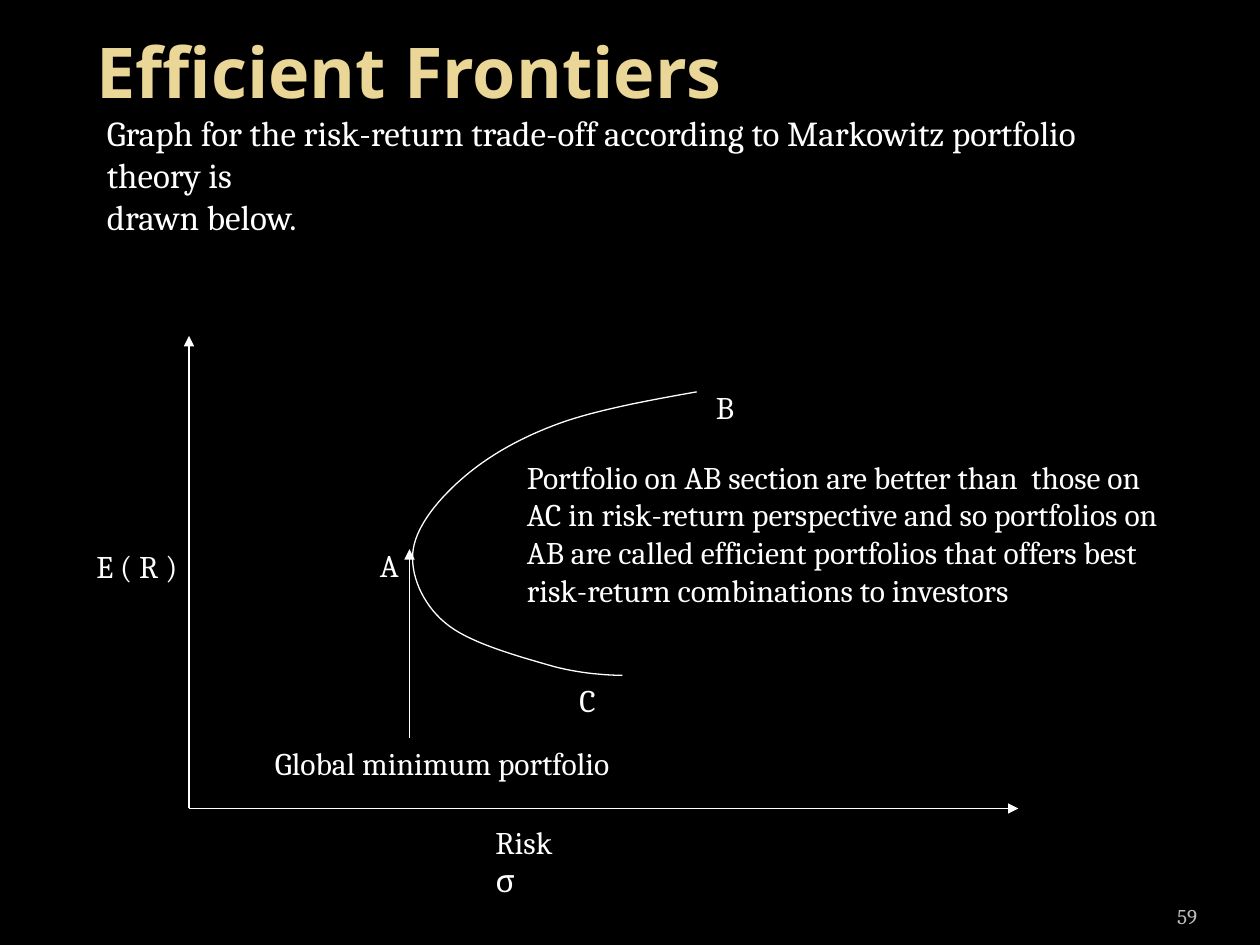
from dataclasses import dataclass
from pptx import Presentation
from pptx.dml.color import RGBColor
from pptx.enum.shapes import MSO_CONNECTOR
from pptx.enum.text import MSO_ANCHOR, PP_ALIGN
from pptx.oxml.ns import qn
from pptx.util import Inches, Pt
from lxml import etree

STRAIGHT = MSO_CONNECTOR.STRAIGHT
TOP, MIDDLE, BOTTOM = MSO_ANCHOR.TOP, MSO_ANCHOR.MIDDLE, MSO_ANCHOR.BOTTOM
LEFT, RIGHT = PP_ALIGN.LEFT, PP_ALIGN.RIGHT
TITLE_ONLY = 5
CELL = Inches(1) / 12  # the page is a grid of 120 columns by 90 rows
LABEL_ROWS = 4.8


@dataclass(frozen=True)
class Theme:
    paper: RGBColor = RGBColor.from_string("000000")
    ink: RGBColor = RGBColor.from_string("FFFFFF")
    gold: RGBColor = RGBColor.from_string("EAD696")
    grey: RGBColor = RGBColor.from_string("BDBDBD")
    heading_font: str = "Noto Sans"
    body_font: str = "Cambria"
    title_size: int = 40
    intro_size: int = 20
    label_size: int = 18
    number_size: int = 12
    line_width: float = 0.75


THEME = Theme()


def grid(cells):
    return round(cells * CELL)


def add_span(para, text, size, color=THEME.ink, font=THEME.body_font, bold=False):
    span = para.add_run()
    span.text = text
    span.font.name = font
    span.font.size = Pt(size)
    span.font.bold = bold
    span.font.color.rgb = color


def set_title(page, text):
    title = page.shapes.title
    title.left, title.top, title.width, title.height = map(grid, (8, 2, 108, 9.4))
    frame = title.text_frame
    frame.vertical_anchor = MIDDLE
    frame.word_wrap = True
    para = frame.paragraphs[0]
    para.alignment = LEFT
    add_span(para, text, THEME.title_size, THEME.gold, THEME.heading_font, bold=True)


def add_text(page, place, lines, size=THEME.label_size, color=THEME.ink,
             wrap=True, align=LEFT, anchor=TOP):
    """Place is column, row, columns, rows; each line is one paragraph."""
    box = page.shapes.add_textbox(*map(grid, place))
    frame = box.text_frame
    frame.word_wrap = wrap
    frame.vertical_anchor = anchor
    for index, line in enumerate(lines):
        para = frame.add_paragraph() if index else frame.paragraphs[0]
        para.alignment = align
        add_span(para, line, size, color)
    return box


def style_line(line):
    line.color.rgb = THEME.ink
    line.width = Pt(THEME.line_width)


def add_arrow(page, start, end):
    arrow = page.shapes.add_connector(STRAIGHT, *map(grid, start + end))
    style_line(arrow.line)
    properties = arrow._element.spPr
    etree.SubElement(properties.find(qn("a:ln")), qn("a:tailEnd"), type="triangle")
    etree.SubElement(properties, qn("a:effectLst"))


def bezier_point(points, share):
    rest = 1 - share
    weights = (rest**3, 3 * rest**2 * share, 3 * rest * share**2, share**3)
    return tuple(sum(w * p[axis] for w, p in zip(weights, points)) for axis in (0, 1))


def add_curve(page, knots, steps=16):
    """Draw joined cubic curves; knots are in inches, every third on the curve."""
    knots = [(Inches(x), Inches(y)) for x, y in knots]
    points = [bezier_point(knots[first:first + 4], step / steps)
              for first in range(0, len(knots) - 1, 3)
              for step in range(1, steps + 1)]
    builder = page.shapes.build_freeform(*knots[0])
    builder.add_line_segments(points, close=False)
    curve = builder.convert_to_shape()
    curve.shadow.inherit = False
    curve.fill.background()
    style_line(curve.line)


def add_frontier(page):
    origin = (18, 77)
    add_arrow(page, origin, (97, 77))
    add_arrow(page, origin, (18, 32))
    add_curve(page, [
        (5.53, 3.11), (5.14, 3.18), (4.75, 3.25), (4.44, 3.36),
        (4.14, 3.47), (3.89, 3.61), (3.69, 3.78),
        (3.5, 3.94), (3.31, 4.16), (3.28, 4.36),
        (3.25, 4.55), (3.35, 4.79), (3.53, 4.94),
        (3.71, 5.1), (4.12, 5.21), (4.36, 5.28),
        (4.6, 5.35), (4.85, 5.36), (4.94, 5.36),
    ])
    add_arrow(page, (39, 70.3), (39, 52.3))
    labels = [
        ("Risk σ", 46, 77.8, 9.7, True),
        ("E ( R )", 8, 51.5, 10.3, False),
        ("A", 35, 51.4, 7, True),
        ("B", 67, 36.4, 4.3, False),
        ("C", 54, 64.3, 4.3, False),
        ("Global minimum portfolio", 25, 70.3, 39, True),
    ]
    for text, column, row, columns, wrap in labels:
        add_text(page, (column, row, columns, LABEL_ROWS), [text], wrap=wrap)


def add_page_number(page, number):
    box = add_text(page, (104, 84.2, 10, LABEL_ROWS), [number], THEME.number_size,
                   THEME.grey, align=RIGHT, anchor=BOTTOM)
    box.text_frame.margin_left = box.text_frame.margin_right = 0


def main():
    deck = Presentation()
    deck.slide_width, deck.slide_height = grid(120), grid(90)
    page = deck.slides.add_slide(deck.slide_layouts[TITLE_ONLY])
    page.background.fill.solid()
    page.background.fill.fore_color.rgb = THEME.paper
    set_title(page, "Efficient Frontiers")
    add_text(page, (9, 10, 103.2, 10), [
        "Graph for the risk-return trade-off according to Markowitz portfolio theory is",
        "drawn below.",
    ], THEME.intro_size)
    add_frontier(page)
    add_text(page, (49, 43, 64, 15.6), [
        "Portfolio on AB section are better than  those on AC in risk-return "
        "perspective and so portfolios on AB are called efficient portfolios "
        "that offers best risk-return combinations to investors",
    ])
    add_page_number(page, "59")
    deck.save("out.pptx")


if __name__ == "__main__":
    main()
